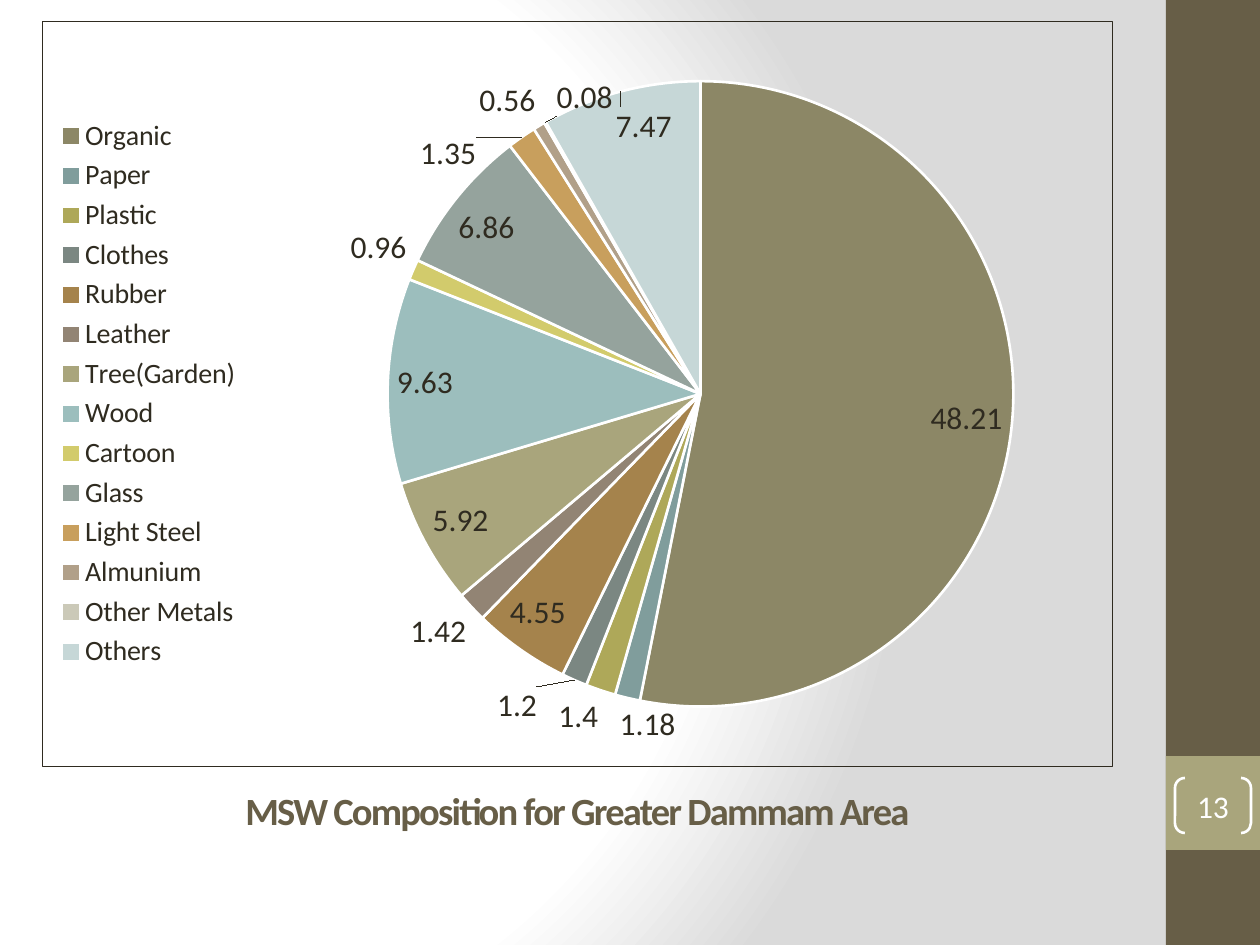
from pptx import Presentation
from pptx.chart.data import CategoryChartData
from pptx.dml.color import RGBColor
from pptx.enum.chart import XL_CHART_TYPE, XL_LABEL_POSITION, XL_LEGEND_POSITION
from pptx.enum.shapes import MSO_SHAPE
from pptx.enum.text import MSO_ANCHOR, PP_ALIGN
from pptx.oxml import parse_xml
from pptx.oxml.ns import nsdecls
from pptx.util import Pt

PIE = XL_CHART_TYPE.PIE
LEFT = XL_LEGEND_POSITION.LEFT
BEST_FIT = XL_LABEL_POSITION.BEST_FIT
RECTANGLE, BRACKETS = MSO_SHAPE.RECTANGLE, MSO_SHAPE.DOUBLE_BRACKET
MIDDLE, BOTTOM = MSO_ANCHOR.MIDDLE, MSO_ANCHOR.BOTTOM
CENTER = PP_ALIGN.CENTER

PX = 914400 / 126
THEME = {
    "font": "Calibri", "ink": "2F2B20", "white": "FFFFFF", "shade": "DADADA",
    "brown": "675E47", "olive": "A9A57C",
    "title_pt": 22, "label_pt": 18, "legend_pt": 16,
}
WASTE = [
    ("Organic", 48.21, "8C8766"), ("Paper", 1.18, "809D9C"),
    ("Plastic", 1.4, "AEA859"), ("Clothes", 1.2, "7B8782"),
    ("Rubber", 4.55, "A5834C"), ("Leather", 1.42, "928474"),
    ("Tree(Garden)", 5.92, "A9A57C"), ("Wood", 9.63, "9CBEBD"),
    ("Cartoon", 0.96, "D2CB6C"), ("Glass", 6.86, "95A39D"),
    ("Light Steel", 1.35, "C89F5D"), ("Almunium", 0.56, "B1A089"),
    ("Other Metals", 0.08, "CBC9B8"), ("Others", 7.47, "C6D7D7"),
]


def px(*lengths):
    return [round(length * PX) for length in lengths]


def style_font(font, size, color, bold=False):
    values = {"name": THEME["font"], "size": Pt(THEME[size]), "bold": bold}
    for key, value in values.items():
        setattr(font, key, value)
    font.color.rgb = RGBColor.from_string(THEME[color])


prs = Presentation()
prs.slide_width, prs.slide_height = px(1260, 945)
slide = prs.slides.add_slide(prs.slide_layouts[6])

# Background: round gradient, which needs XML
slide.background.fill.solid()
background = slide.background.fill._xPr
background.replace(background[0], parse_xml(
    f'<a:gradFill {nsdecls("a")} rotWithShape="1"><a:gsLst>'
    + "".join(f'<a:gs pos="{stop * 1000}"><a:srgbClr val="{THEME[color]}"/></a:gs>'
              for stop, color in ((0, "white"), (75, "white"), (100, "shade")))
    + '</a:gsLst><a:path path="circle">'
    '<a:fillToRect l="20000" t="50000" r="100000" b="50000"/>'
    '</a:path></a:gradFill>'))

# Side band and page number block
for box, color in (((1166, 0, 94, 945), "brown"), ((1166, 756, 94, 94), "olive")):
    band = slide.shapes.add_shape(RECTANGLE, *px(*box))
    band.shadow.inherit = False
    band.fill.solid()
    band.fill.fore_color.rgb = RGBColor.from_string(THEME[color])
    band.line.fill.background()

# Title
title = slide.shapes.add_textbox(*px(42, 757, 1071, 82)).text_frame
title.word_wrap = True
title.vertical_anchor = BOTTOM
title.paragraphs[0].alignment = CENTER
heading = title.paragraphs[0].add_run()
heading.text = "MSW Composition for Greater Dammam Area"
style_font(heading.font, "title_pt", "brown", bold=True)
heading.font._element.set("spc", "-100")

# Waste pie
waste_data = CategoryChartData()
waste_data.categories = [name for name, _, _ in WASTE]
waste_data.add_series("Series 1", [share for _, share, _ in WASTE])
pie = slide.shapes.add_chart(PIE, *px(42, 21, 1071, 746), waste_data).chart
style_font(pie.font, "label_pt", "ink")
pie.has_title = False
pie.has_legend = True
pie.legend.position = LEFT
pie.legend.include_in_layout = False
style_font(pie.legend.font, "legend_pt", "ink")

plot = pie.plots[0]
plot.vary_by_categories = True
plot.has_data_labels = True
for key, value in {"show_value": True, "show_percentage": False,
                   "position": BEST_FIT}.items():
    setattr(plot.data_labels, key, value)
style_font(plot.data_labels.font, "label_pt", "ink")

for index, (_, _, color) in enumerate(WASTE):
    wedge = plot.series[0].points[index].format
    wedge.fill.solid()
    wedge.fill.fore_color.rgb = RGBColor.from_string(color)
    wedge.line.color.rgb = RGBColor.from_string(THEME["white"])
    wedge.line.width = Pt(1.5)

# Pie placement and chart border
plot_area = pie._chartSpace.chart.plotArea
for old_layout in plot_area.findall("{*}layout"):
    plot_area.remove(old_layout)
plot_area.insert(0, parse_xml(
    f'<c:layout {nsdecls("c")}><c:manualLayout><c:layoutTarget val="inner"/>'
    '<c:xMode val="edge"/><c:yMode val="edge"/><c:x val="0.32"/><c:y val="0.08"/>'
    '<c:w val="0.59"/><c:h val="0.84"/></c:manualLayout></c:layout>'))
pie._chartSpace.chart.addnext(parse_xml(
    f'<c:spPr {nsdecls("c", "a")}><a:noFill/><a:ln w="9525"><a:solidFill>'
    f'<a:srgbClr val="{THEME["ink"]}"/></a:solidFill></a:ln></c:spPr>'))

# Page number in brackets
page = slide.shapes.add_shape(BRACKETS, *px(1175, 778, 76, 55))
page.shadow.inherit = False
page.adjustments[0] = 0.18
page.fill.background()
page.line.color.rgb = RGBColor.from_string(THEME["white"])
page.line.width = Pt(1.5)
for key, value in {"margin_left": 0, "margin_right": 0, "margin_top": 0,
                   "margin_bottom": 0, "vertical_anchor": MIDDLE}.items():
    setattr(page.text_frame, key, value)
page.text_frame.text = "13"
page.text_frame.paragraphs[0].alignment = CENTER
style_font(page.text_frame.paragraphs[0].runs[0].font, "label_pt", "white")

prs.save("out.pptx")
